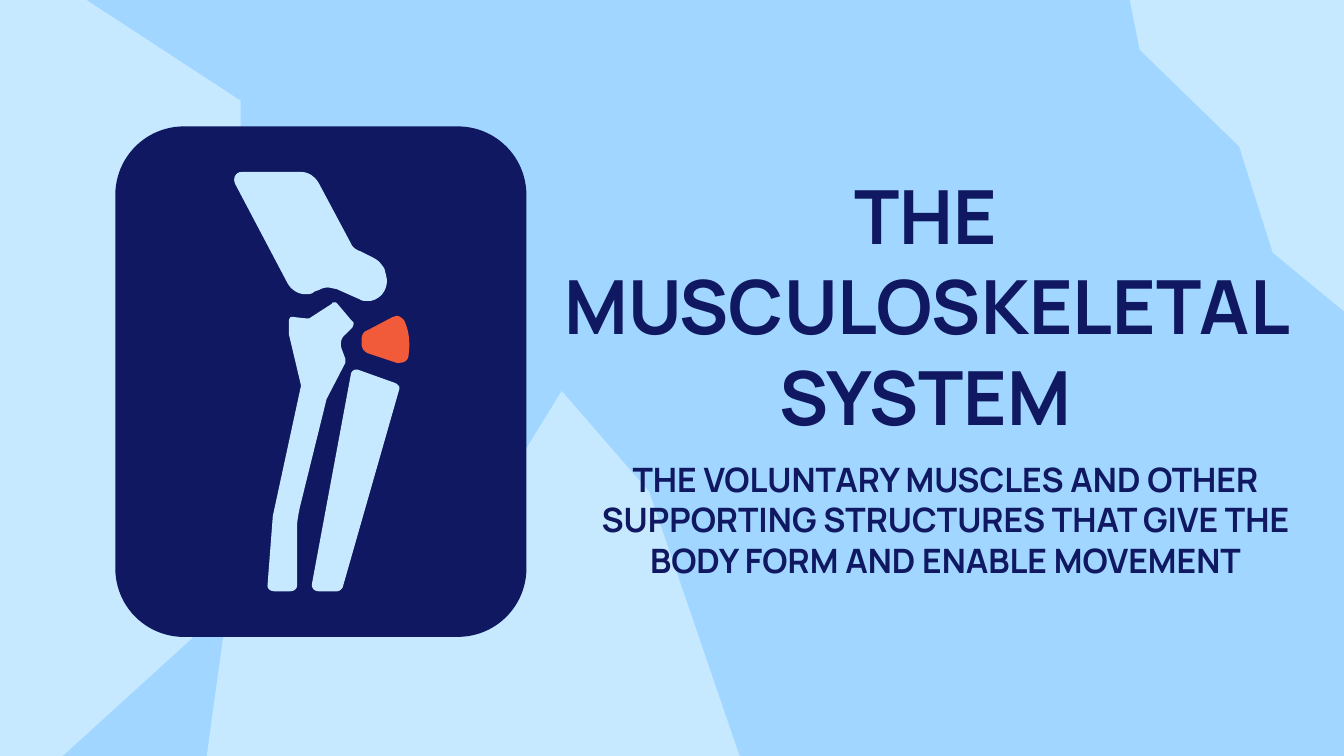
from pptx import Presentation
from pptx import util as u
from pptx.dml.color import RGBColor
from pptx.enum import shapes, text

NAVY = RGBColor(0x0F, 0x18, 0x60)
SKY = RGBColor(0xA0, 0xD6, 0xFF)
ICE = RGBColor(0xC6, 0xE9, 0xFF)
ORANGE = RGBColor(0xF2, 0x5B, 0x3A)
FONT = "Manrope"

HEADING = "THE MUSCULOSKELETAL SYSTEM"
DEFINITION = (
    "THE VOLUNTARY MUSCLES AND OTHER SUPPORTING STRUCTURES "
    "THAT GIVE THE BODY FORM AND ENABLE MOVEMENT"
)

# Outlines in hundredths of an inch: two numbers are a corner, six a Bézier curve.
GRID = u.Cm(0.0254)
CURVE_STEPS = 8

FACETS = [
    [(297, 354), (172, 431), (151, 583), (369, 583), (369, 371)],
    [(418, 291), (483, 366), (558, 585), (368, 585), (368, 372)],
    [(824, -84), (848, 37), (922, 109), (947, 188), (1004, 235), (1004, -84)],
    [(0, 605), (0, -42), (179, 75), (179, 201), (104, 319), (151, 404),
     (143, 475)],
]

FIBULA = [
    (265, 275), (263, 275, 261, 277, 261, 279), (232, 435),
    (232, 438, 234, 440, 237, 440), (251, 440),
    (252, 440, 254, 439, 255, 437), (297, 290),
    (298, 288, 296, 286, 294, 285), (266, 275),
]
TIBIA = [
    (249, 225), (248, 225, 247, 225, 247, 226), (230, 237),
    (230, 237, 229, 237, 228, 237), (219, 236),
    (216, 235, 215, 237, 215, 239), (215, 249), (224, 287), (203, 384),
    (199, 436), (199, 438, 201, 440, 204, 440), (216, 440),
    (219, 440, 221, 438, 221, 436), (221, 392),
    (221, 388, 222, 383, 223, 378), (243, 297), (257, 270),
    (257, 269, 257, 268, 257, 267), (254, 259),
    (253, 255, 254, 251, 257, 249), (262, 244),
    (263, 242, 264, 240, 262, 239), (251, 226),
    (250, 225, 250, 225, 249, 225),
]
FEMUR = [
    (180, 128), (175, 128, 173, 133, 175, 137), (214, 211),
    (217, 216, 222, 219, 227, 219), (230, 219, 232, 219, 234, 217),
    (237, 216), (239, 215, 241, 214, 244, 214),
    (246, 214, 248, 215, 250, 215), (268, 223),
    (269, 224, 271, 224, 273, 224), (274, 224, 275, 224, 276, 224),
    (285, 222, 290, 213, 287, 204), (286, 200),
    (284, 197, 282, 194, 278, 192), (268, 187),
    (265, 186, 262, 184, 261, 181), (237, 136),
    (234, 131, 229, 128, 224, 128),
]
PATELLA = [
    (295, 235), (294, 235, 293, 236, 292, 236), (273, 246),
    (270, 247, 269, 250, 269, 253), (269, 256),
    (269, 259, 271, 262, 274, 263), (295, 270),
    (296, 270, 297, 270, 297, 270), (301, 270, 304, 268, 304, 264),
    (305, 257, 305, 248, 301, 239), (300, 237, 297, 235, 295, 235),
]
BONES = [(FIBULA, ICE), (TIBIA, ICE), (FEMUR, ICE), (PATELLA, ORANGE)]


def trace(outline):
    points = [outline[0]]
    for segment in outline[1:]:
        if len(segment) == 2:
            points.append(segment)
            continue
        start, ends = points[-1], (segment[:2], segment[2:4], segment[4:])
        for step in range(1, CURVE_STEPS + 1):
            t = step / CURVE_STEPS
            weights = ((1 - t) ** 3, 3 * t * (1 - t) ** 2,
                       3 * t ** 2 * (1 - t), t ** 3)
            points.append(tuple(
                sum(w * p[axis] for w, p in zip(weights, (start, *ends)))
                for axis in (0, 1)))
    return [(round(x * GRID), round(y * GRID)) for x, y in points]


def paint(shape, color):
    shape.shadow.inherit = False
    shape.fill.solid()
    shape.fill.fore_color.rgb = color
    shape.line.fill.background()


def draw_outline(slide, outline, color):
    first, *rest = trace(outline)
    builder = slide.shapes.build_freeform(*first, scale=1.0)
    builder.add_line_segments(rest, close=True)
    paint(builder.convert_to_shape(), color)


def write(holder, words, size, left, top, width, height):
    holder.left, holder.top = u.Cm(left), u.Cm(top)
    holder.width, holder.height = u.Cm(width), u.Cm(height)
    frame = holder.text_frame
    frame.text = words
    frame.word_wrap = True
    frame.auto_size = text.MSO_AUTO_SIZE.NONE
    frame.vertical_anchor = text.MSO_ANCHOR.TOP
    frame.margin_left = frame.margin_right = u.Cm(0.25)
    frame.margin_top = frame.margin_bottom = u.Cm(0.25)
    paragraph = frame.paragraphs[0]
    paragraph.alignment = text.PP_ALIGN.CENTER
    paragraph.space_before = u.Pt(0)
    paragraph.line_spacing = u.Pt(round(size * 1.21, 1))
    font = paragraph.runs[0].font
    font.name, font.size, font.bold = FONT, u.Pt(size), True
    font.color.rgb = NAVY


def main():
    deck = Presentation()
    deck.slide_width, deck.slide_height = u.Cm(25.4), u.Cm(14.29)
    slide = deck.slides.add_slide(deck.slide_layouts[0])
    slide.background.fill.solid()
    slide.background.fill.fore_color.rgb = SKY
    heading, definition = slide.placeholders

    for facet in FACETS:
        draw_outline(slide, facet, ICE)

    card = slide.shapes.add_shape(
        shapes.MSO_SHAPE.ROUNDED_RECTANGLE,
        u.Cm(2.18), u.Cm(2.39), u.Cm(7.77), u.Cm(9.65))
    paint(card, NAVY)
    for bone, color in BONES:
        draw_outline(slide, bone, color)

    write(heading, HEADING, 40, 9.96, 2.95, 15.06, 5.18)
    write(definition, DEFINITION, 18, 10.34, 8.41, 15.06, 2.95)
    for holder in (heading, definition):
        slide.shapes.element.append(holder.element)

    deck.save("out.pptx")


if __name__ == "__main__":
    main()
